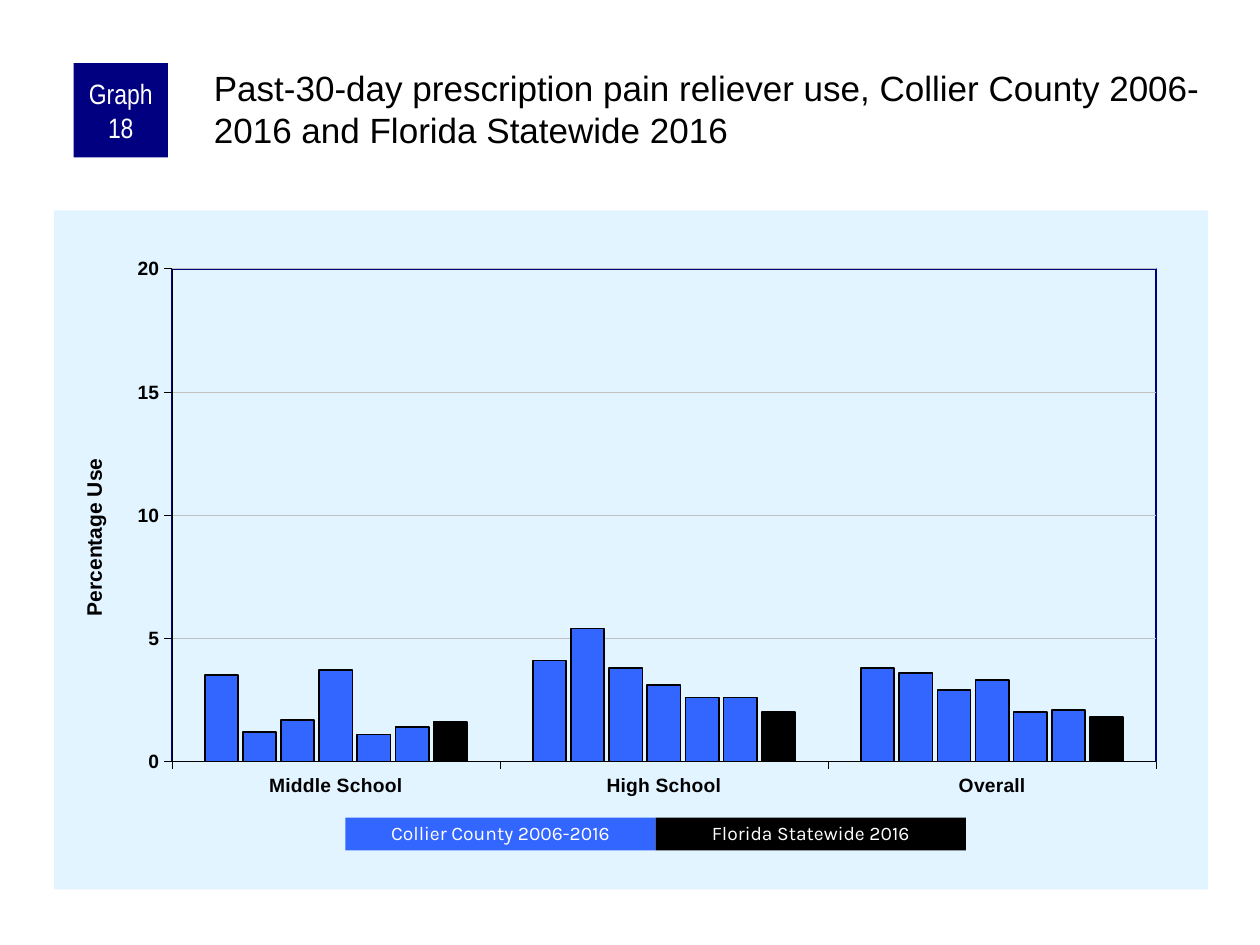
from dataclasses import dataclass

from lxml.etree import _Element as Element
from pptx import Presentation
from pptx.chart.axis import _BaseAxis as Axis
from pptx.chart.chart import Chart
from pptx.chart.data import CategoryChartData
from pptx.dml.color import RGBColor
from pptx.enum.chart import XL_CHART_TYPE as ChartType, XL_TICK_MARK as TickMark
from pptx.enum.shapes import MSO_SHAPE as ShapeKind
from pptx.enum.text import MSO_ANCHOR as Anchor, MSO_AUTO_SIZE as AutoSize, PP_ALIGN as Align
from pptx.oxml import parse_xml
from pptx.oxml.ns import nsdecls, qn
from pptx.slide import Slide
from pptx.text.text import Font, TextFrame
from pptx.util import Pt


@dataclass(frozen=True)
class Theme:
    navy: str = "000080"
    blue: str = "3366FF"
    black: str = "000000"
    white: str = "FFFFFF"
    panel: str = "E1F4FF"
    grid: str = "C0C0C0"
    sans: str = "Arial"
    narrow: str = "Arial Narrow"
    legend: str = "Karla"
    title_size: float = 20
    badge_size: float = 16
    axis_title_size: float = 12
    label_size: float = 11


@dataclass(frozen=True)
class Label:
    text: str
    left: float
    top: float
    width: float
    height: float
    fill: str
    font: str
    size: float
    inset: tuple[float, float] = (7.2, 3.6)
    line_spacing: float = 1.0


THEME = Theme()
LEGEND_LEFT, LEGEND_TOP, LEGEND_WIDTH, LEGEND_HEIGHT = 197.4, 467.3, 177.3, 18.7

BADGE = Label("Graph 18", 42, 36, 54, 54, THEME.navy, THEME.narrow,
              THEME.badge_size, (3.6, 0))
LEGEND = [
    Label(text, LEGEND_LEFT + index * LEGEND_WIDTH, LEGEND_TOP, LEGEND_WIDTH,
          LEGEND_HEIGHT, fill, THEME.legend, THEME.label_size, line_spacing=0.9)
    for index, (text, fill) in enumerate([
        ("Collier County 2006-2016", THEME.blue),
        ("Florida Statewide 2016", THEME.black),
    ])
]

CATEGORIES = ["Middle School", "High School", "Overall"]
# One row per survey, the last being the statewide one
SURVEYS = [
    (3.5, 4.1, 3.8),
    (1.2, 5.4, 3.6),
    (1.7, 3.8, 2.9),
    (3.7, 3.1, 3.3),
    (1.1, 2.6, 2),
    (1.4, 2.6, 2.1),
    (1.6, 2, 1.8),
]


def style_font(font: Font, name: str, size: float, color: str, bold: bool = False) -> None:
    font.name, font.size, font.bold = name, Pt(size), bold
    font.color.rgb = RGBColor.from_string(color)


def set_insets(frame: TextFrame, left: float, top: float, right: float, bottom: float) -> None:
    frame.margin_left, frame.margin_top = Pt(left), Pt(top)
    frame.margin_right, frame.margin_bottom = Pt(right), Pt(bottom)


def add_title(slide: Slide, text: str) -> None:
    title = slide.shapes.title
    title.left, title.top, title.width, title.height = Pt(120), Pt(36), Pt(570), Pt(60)
    frame = title.text_frame
    frame.text = text
    frame.word_wrap, frame.auto_size = True, AutoSize.NONE
    frame.vertical_anchor = Anchor.TOP
    set_insets(frame, 2.2, 2.2, 0, 0)
    paragraph = frame.paragraphs[0]
    paragraph.alignment = Align.LEFT
    style_font(paragraph.runs[0].font, THEME.sans, THEME.title_size, THEME.black)


def add_label(slide: Slide, label: Label) -> None:
    shape = slide.shapes.add_shape(ShapeKind.RECTANGLE, Pt(label.left), Pt(label.top),
                                   Pt(label.width), Pt(label.height))
    shape.shadow.inherit = False
    shape.fill.solid()
    shape.fill.fore_color.rgb = RGBColor.from_string(label.fill)
    shape.line.fill.background()
    frame = shape.text_frame
    frame.text = label.text
    frame.word_wrap, frame.vertical_anchor = True, Anchor.MIDDLE
    horizontal, vertical = label.inset
    set_insets(frame, horizontal, vertical, horizontal, vertical)
    paragraph = frame.paragraphs[0]
    paragraph.alignment, paragraph.line_spacing = Align.CENTER, label.line_spacing
    style_font(paragraph.runs[0].font, label.font, label.size, THEME.white)


def set_layout(parent: Element, index: int, target: str = "", **fractions: float) -> None:
    """Place a chart part by fractions of the chart's size."""
    old = parent.find(qn("c:layout"))
    if old is not None:
        parent.remove(old)
    modes = "".join(f'<c:{axis}Mode val="edge"/>' for axis in "xy")
    values = "".join(f'<c:{key} val="{value}"/>' for key, value in fractions.items())
    parent.insert(index, parse_xml(
        f'<c:layout {nsdecls("c")}><c:manualLayout>{target}{modes}{values}'
        '</c:manualLayout></c:layout>'))


def area_format(fill: str, line: str) -> Element:
    return parse_xml(f'<c:spPr {nsdecls("c", "a")}>{fill}<a:ln w="{Pt(1)}">{line}</a:ln></c:spPr>')


def solid(color: str) -> str:
    return f'<a:solidFill><a:srgbClr val="{color}"/></a:solidFill>'


def style_axis(axis: Axis) -> None:
    axis.major_tick_mark, axis.minor_tick_mark = TickMark.OUTSIDE, TickMark.NONE
    style_font(axis.tick_labels.font, THEME.sans, THEME.label_size, THEME.black, True)
    axis.format.line.width = Pt(0.25)
    axis.format.line.color.rgb = RGBColor.from_string(THEME.black)


def style_value_axis(chart: Chart) -> None:
    axis = chart.value_axis
    axis.minimum_scale, axis.maximum_scale, axis.major_unit = 0, 20, 5
    axis.tick_labels.number_format = "0"
    axis.tick_labels.number_format_is_linked = False
    gridline = axis.major_gridlines.format.line
    gridline.width = Pt(0.25)
    gridline.color.rgb = RGBColor.from_string(THEME.grid)
    # Upright title left of the axis
    frame = axis.axis_title.text_frame
    frame.text = "Percentage Use"
    style_font(frame.paragraphs[0].runs[0].font, THEME.sans, THEME.axis_title_size,
               THEME.black, True)
    title = axis.axis_title._element
    title.find(".//" + qn("a:bodyPr")).set("rot", "-5400000")
    set_layout(title, 1, x=0.02, y=0.36)


def add_chart(slide: Slide) -> None:
    data = CategoryChartData()
    data.categories = CATEGORIES
    for number, values in enumerate(SURVEYS, 1):
        data.add_series(f"Series {number}", values)
    chart = slide.shapes.add_chart(ChartType.COLUMN_CLUSTERED, Pt(30.9), Pt(120.2),
                                   Pt(659.5), Pt(388), data).chart
    chart.has_legend = chart.has_title = False
    style_font(chart.font, THEME.sans, 8, THEME.black)
    style_axis(chart.category_axis)
    style_axis(chart.value_axis)
    style_value_axis(chart)

    # Columns
    plot = chart.plots[0]
    plot.gap_width, plot.overlap, plot.vary_by_categories = 200, -15, False
    for series in plot.series:
        color = THEME.black if series.name == f"Series {len(SURVEYS)}" else THEME.blue
        series.format.fill.solid()
        series.format.fill.fore_color.rgb = RGBColor.from_string(color)
        series.format.line.width = Pt(1)
        series.format.line.color.rgb = RGBColor.from_string(THEME.black)

    # Pale panel and navy plot frame
    chart_element = chart._chartSpace.find(qn("c:chart"))
    chart_element.addnext(area_format(solid(THEME.panel), "<a:noFill/>"))
    plot_area = chart_element.find(qn("c:plotArea"))
    plot_area.append(area_format("<a:noFill/>", solid(THEME.navy)))
    set_layout(plot_area, 0, '<c:layoutTarget val="inner"/>', x=0.102, y=0.086, w=0.853, h=0.726)


def main() -> None:
    presentation = Presentation()
    presentation.slide_width, presentation.slide_height = Pt(720), Pt(540)
    slide = presentation.slides.add_slide(presentation.slide_layouts[5])
    add_chart(slide)
    add_title(slide, "Past-30-day prescription pain reliever use, "
                     "Collier County 2006-2016 and Florida Statewide 2016")
    for label in [BADGE, *LEGEND]:
        add_label(slide, label)
    presentation.save("out.pptx")


if __name__ == "__main__":
    main()
